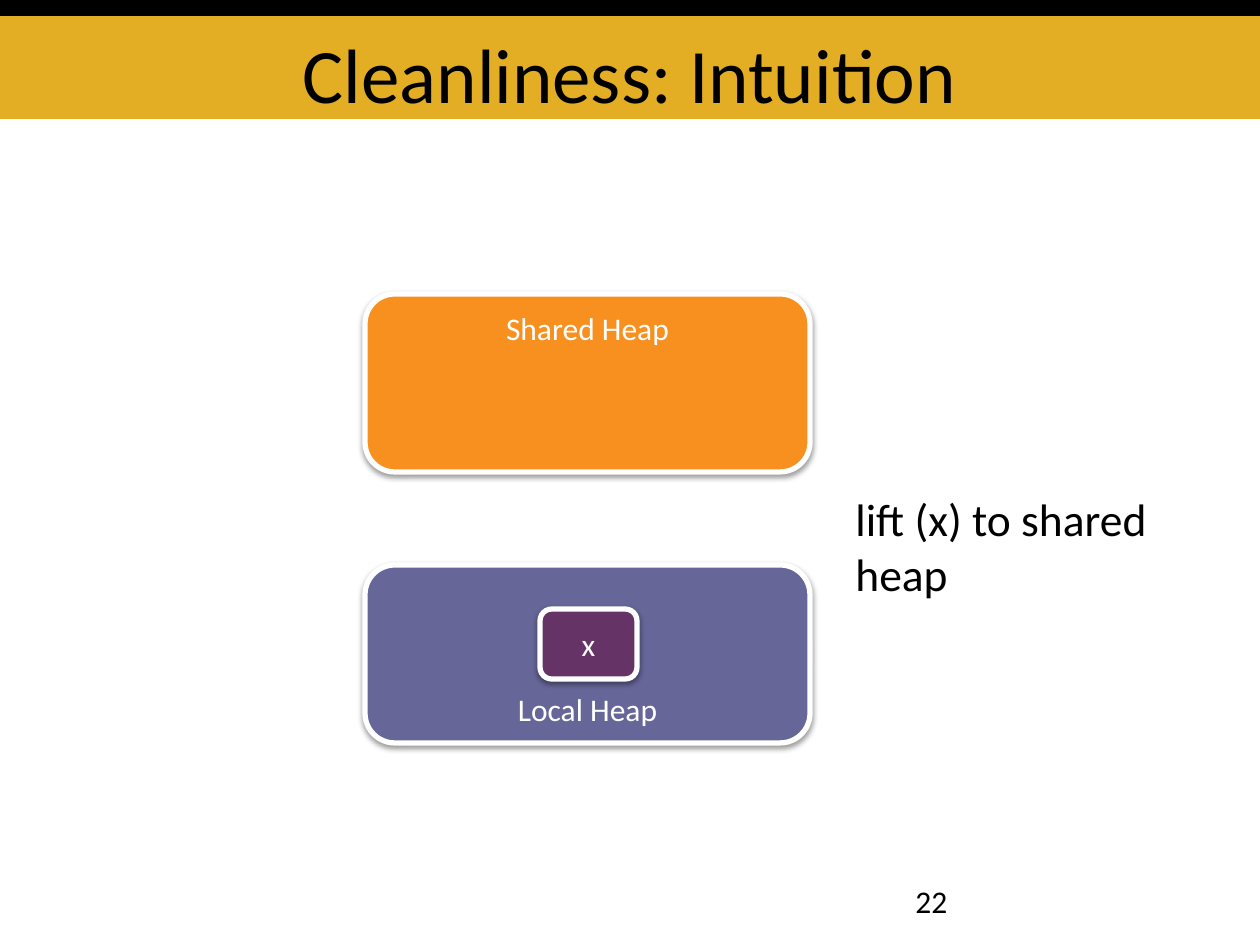
from lxml import etree
from pptx import Presentation
from pptx.dml.color import RGBColor
from pptx.enum.shapes import MSO_SHAPE
from pptx.enum.text import MSO_ANCHOR, PP_ALIGN
from pptx.oxml.ns import qn
from pptx.util import Emu, Pt

RECTANGLE, ROUNDED = MSO_SHAPE.RECTANGLE, MSO_SHAPE.ROUNDED_RECTANGLE
TOP, MIDDLE, BOTTOM = MSO_ANCHOR.TOP, MSO_ANCHOR.MIDDLE, MSO_ANCHOR.BOTTOM
LEFT, CENTER = PP_ALIGN.LEFT, PP_ALIGN.CENTER

PX_PER_INCH = 126
COLORS = {
    "gold": "E3AE24",
    "black": "000000",
    "white": "FFFFFF",
    "shared": "F7901E",
    "local": "666699",
    "object": "663366",
}


def px(length):
    return Emu(round(length * 914400 / PX_PER_INCH))


def color(name):
    return RGBColor.from_string(COLORS[name])


class SlideBuilder:
    font_name = "Calibri"

    def __init__(self, slide):
        self.slide = slide

    def set_text(self, shape, lines, size, color_name, align, anchor):
        frame = shape.text_frame
        frame.vertical_anchor = anchor
        frame.text = "\n".join(lines)
        for paragraph in frame.paragraphs:
            paragraph.alignment = align
            paragraph.font.name = self.font_name
            paragraph.font.size = Pt(size)
            paragraph.font.color.rgb = color(color_name)
        return frame

    def shape(self, kind, box, fill):
        shape = self.slide.shapes.add_shape(kind, *map(px, box))
        shape.shadow.inherit = False
        shape.fill.solid()
        shape.fill.fore_color.rgb = color(fill)
        shape.line.fill.background()
        return shape

    def card(self, box, fill, label, anchor):
        shape = self.shape(ROUNDED, box, fill)
        shape.line.color.rgb = color("white")
        shape.line.width = Pt(3)
        self.add_shadow(shape)
        self.set_text(shape, [label], 18, "white", CENTER, anchor)

    def add_shadow(self, shape):
        effects = shape._element.spPr.find(qn("a:effectLst"))
        shadow = etree.SubElement(
            effects, qn("a:outerShdw"), blurRad=str(Pt(3.1)),
            dist=str(Pt(1.6)), dir="5400000", rotWithShape="0")
        tint = etree.SubElement(shadow, qn("a:srgbClr"), val=COLORS["black"])
        etree.SubElement(tint, qn("a:alpha"), val="38000")

    def text(self, box, lines, size, align=LEFT, anchor=TOP, wrap=True):
        shape = self.slide.shapes.add_textbox(*map(px, box))
        frame = self.set_text(shape, lines, size, "black", align, anchor)
        frame.word_wrap = wrap
        return frame


def main():
    presentation = Presentation()
    presentation.slide_width = px(1260)
    presentation.slide_height = px(945)
    slide = presentation.slides.add_slide(presentation.slide_layouts[6])
    builder = SlideBuilder(slide)

    # Title band
    builder.shape(RECTANGLE, (0, 16, 1260, 103), "gold")
    builder.shape(RECTANGLE, (0, 0, 1260, 16), "black")
    title = builder.text((63, 16, 1134, 103), ["Cleanliness: Intuition"], 44,
                         CENTER, BOTTOM)
    title.margin_bottom = 0

    # Page number
    builder.text((903, 876, 294, 50), ["22"], 18)

    # Heaps and the object in the local heap
    builder.card((365, 294, 445, 178), "shared", "Shared Heap", TOP)
    builder.card((365, 565, 445, 178), "local", "Local Heap", BOTTOM)
    builder.card((540, 609, 97, 70), "object", "x", MIDDLE)

    # Explanation
    builder.text((843, 485, 320, 123), ["lift (x) to shared", "heap"], 26,
                 wrap=False)

    presentation.save("out.pptx")


if __name__ == "__main__":
    main()
